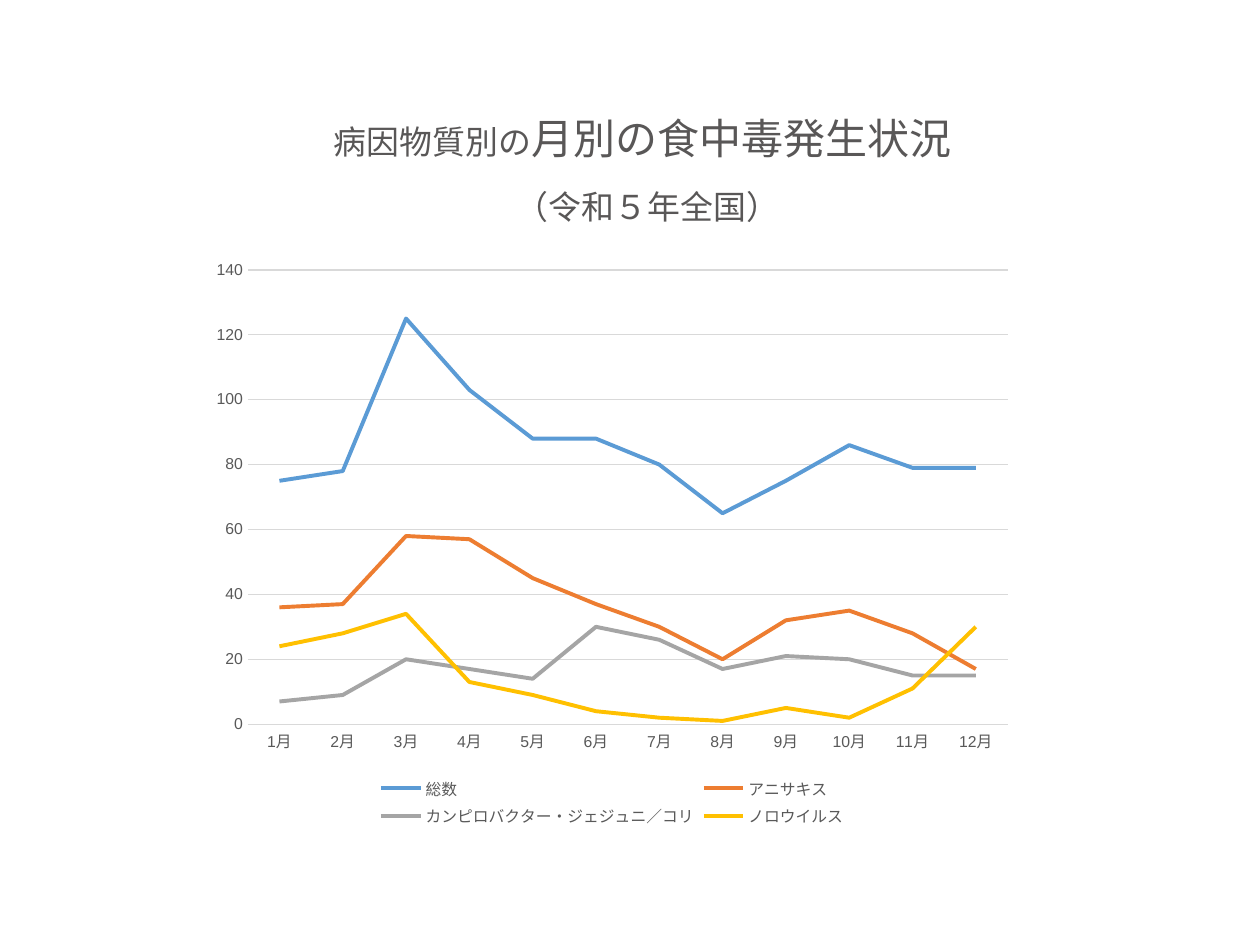
from pptx import Presentation
from pptx.chart.data import CategoryChartData as Data
from pptx.dml.color import RGBColor as Rgb
from pptx.enum.chart import XL_CHART_TYPE as Kind, XL_LEGEND_POSITION as Spot
from pptx.enum.chart import XL_TICK_MARK as Tick
from pptx.enum.text import PP_ALIGN as Align
from pptx.util import Pt

PX = 914400 / 126
FACE = "Arial"
HUE = {
    "title": "595757", "label": "595959", "grid": "D9D9D9",
    "blue": "5B9BD5", "orange": "ED7D31", "gray": "A5A5A5", "gold": "FFC000",
}
MONTHS = [f"{n}月" for n in range(1, 13)]
CASES = [
    ("総数", "blue", [75, 78, 125, 103, 88, 88, 80, 65, 75, 86, 79, 79]),
    ("アニサキス", "orange", [36, 37, 58, 57, 45, 37, 30, 20, 32, 35, 28, 17]),
    ("カンピロバクター・ジェジュニ／コリ", "gray",
     [7, 9, 20, 17, 14, 30, 26, 17, 21, 20, 15, 15]),
    ("ノロウイルス", "gold", [24, 28, 34, 13, 9, 4, 2, 1, 5, 2, 11, 30]),
]
TITLE = [
    [("病因物質別の", 18.8), ("月別の食中毒発生状況 ", 24)],
    [("（令和５年全国）", 18.8)],
]


def emu(*lens):
    """Turn px lengths into EMU."""
    return [round(n * PX) for n in lens]


def style(font, size, hue):
    """Set face, size and colour of a font."""
    font.name = FACE
    font.size = Pt(size)
    font.color.rgb = Rgb.from_string(HUE[hue])


def stroke(line, hue, width):
    """Set colour and width of a line."""
    line.color.rgb = Rgb.from_string(HUE[hue])
    line.width = Pt(width)


def add_title(slide, box, paras):
    """Add the centred heading run by run."""
    frame = slide.shapes.add_textbox(*emu(*box)).text_frame
    frame.word_wrap = True
    for i, runs in enumerate(paras):
        para = frame.paragraphs[0] if i == 0 else frame.add_paragraph()
        para.alignment = Align.CENTER
        para.line_spacing = Pt(26)
        para.space_before = Pt(10 if i else 0)
        for text, size in runs:
            run = para.add_run()
            run.text = text
            style(run.font, size, "title")


def set_axes(chart):
    """Style both axes and the grid."""
    cat, val = chart.category_axis, chart.value_axis
    for axis in (cat, val):
        axis.major_tick_mark = axis.minor_tick_mark = Tick.NONE
        style(axis.tick_labels.font, 9, "label")
    stroke(cat.format.line, "grid", 0.75)
    val.format.line.fill.background()
    val.minimum_scale, val.maximum_scale, val.major_unit = 0, 140, 20
    val.has_major_gridlines = True
    stroke(val.major_gridlines.format.line, "grid", 0.75)


def add_lines(slide, box, months, cases):
    """Add the line chart with its legend."""
    data = Data()
    data.categories = months
    for name, _, vals in cases:
        data.add_series(name, vals)
    chart = slide.shapes.add_chart(Kind.LINE, *emu(*box), data).chart
    chart.has_title = False
    chart.font.name = FACE
    chart.font.size = Pt(10)
    set_axes(chart)
    plot = chart.plots[0]
    plot.vary_by_categories = False
    for line, (_, hue, _) in zip(plot.series, cases):
        line.smooth = False
        stroke(line.format.line, hue, 2.25)
    chart.has_legend = True
    chart.legend.position = Spot.BOTTOM
    chart.legend.include_in_layout = False
    style(chart.legend.font, 9, "label")


def main():
    """Build and save the slide."""
    deck = Presentation()
    deck.slide_width, deck.slide_height = emu(1260, 945)
    slide = deck.slides.add_slide(deck.slide_layouts[6])
    add_lines(slide, (200, 249, 824, 583), MONTHS, CASES)
    add_title(slide, (242, 111, 811, 126), TITLE)
    deck.save("out.pptx")


if __name__ == "__main__":
    main()
